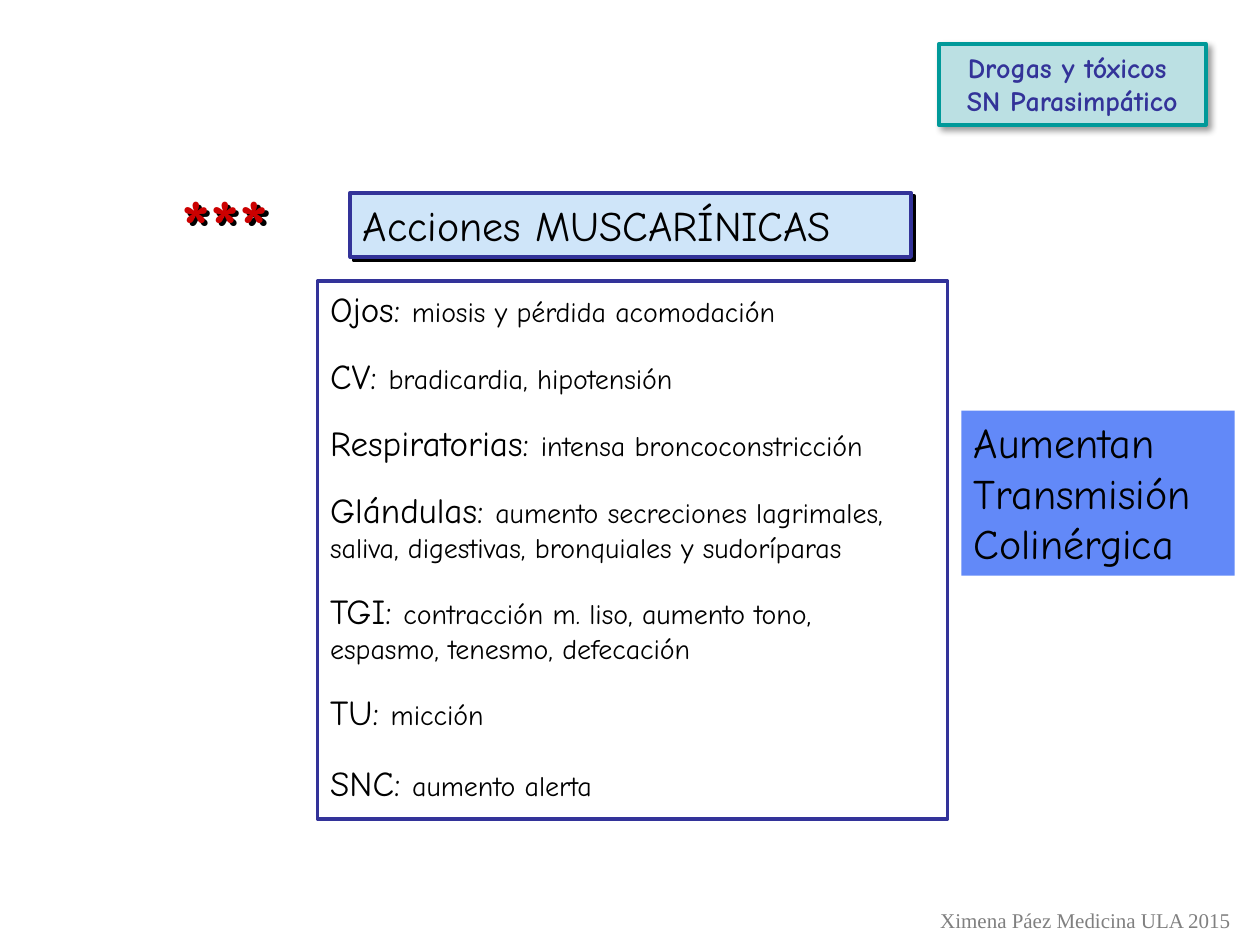
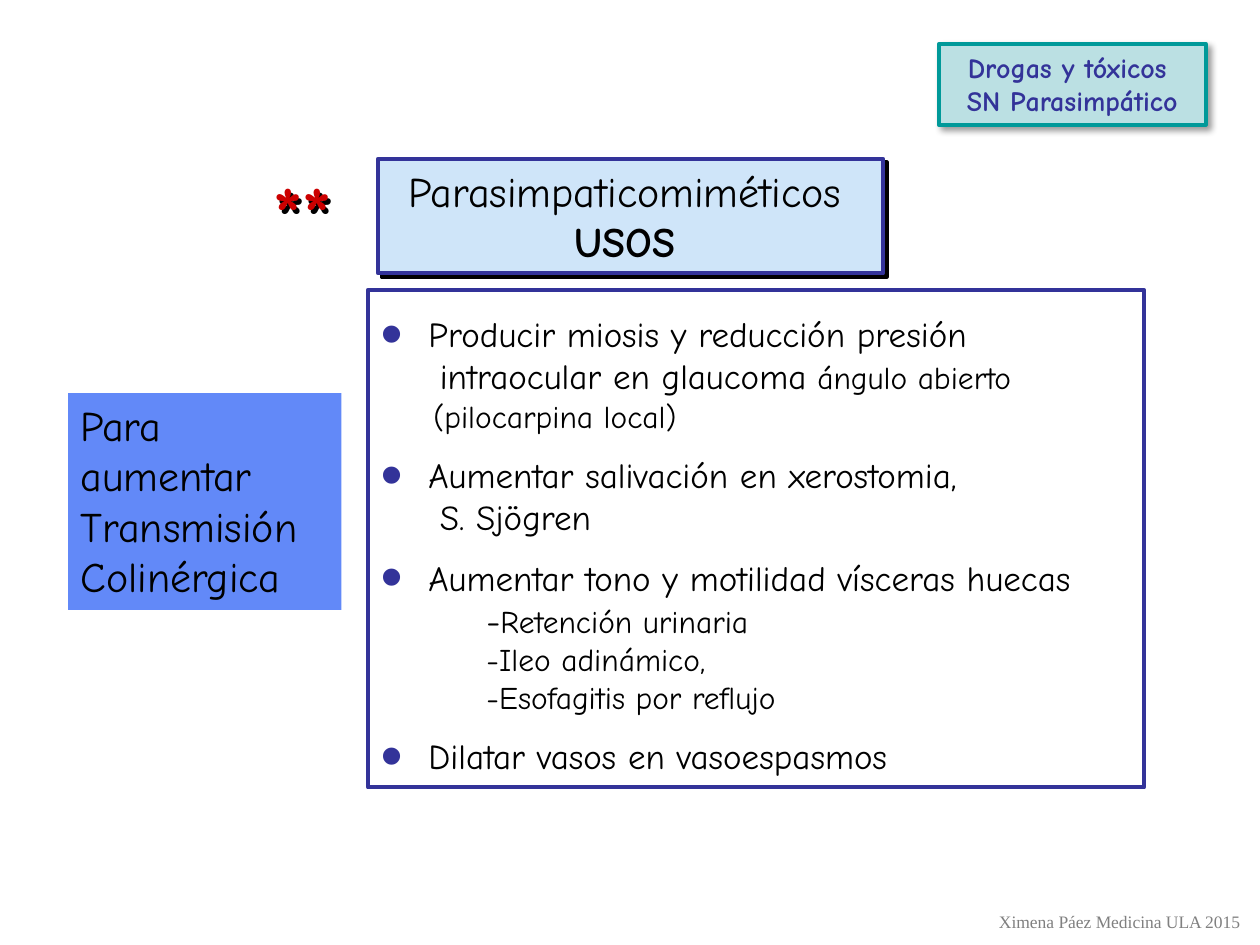
from lxml import etree
from pptx import Presentation
from pptx.dml.color import RGBColor
from pptx.enum.shapes import MSO_SHAPE
from pptx.enum.text import MSO_ANCHOR, MSO_AUTO_SIZE, PP_ALIGN
from pptx.oxml.ns import qn
from pptx.util import Inches, Pt

# Shared style
INDIGO = RGBColor(0x33, 0x33, 0x99)
TEAL = RGBColor(0x00, 0x99, 0x99)
MINT = RGBColor(0xBB, 0xE0, 0xE3)
SKY = RGBColor(0xCF, 0xE5, 0xF9)
BLUE = RGBColor(0x62, 0x89, 0xF8)
RED = RGBColor(0xCC, 0x00, 0x00)
GRAY = RGBColor(0x80, 0x80, 0x80)
BLACK = RGBColor(0x00, 0x00, 0x00)
FONT = "Comic Neue"
FOOTER_FONT = "Times New Roman"
TITLE_AND_BODY = 1


def add_xml(parent, tag, **attributes):
    return etree.SubElement(parent, qn(tag), attributes)


class Deck:
    """Holds the presentation, its style and the current slide."""

    def __init__(self):
        self.prs = Presentation()
        self.prs.slide_width, self.prs.slide_height = Inches(10), Inches(7.5)
        self.slide = None

    def new_slide(self):
        self.slide = self.prs.slides.add_slide(self.prs.slide_layouts[TITLE_AND_BODY])

    def place(self, shape, box):
        shape.left, shape.top, shape.width, shape.height = map(Inches, box)

    def paint(self, shape, fill=None, line=None):
        if fill is None:
            shape.fill.background()
        else:
            shape.fill.solid()
            shape.fill.fore_color.rgb = fill
        if line is None:
            shape.line.fill.background()
        else:
            shape.line.color.rgb = line
            shape.line.width = Pt(2.25)

    def cast_shadow(self, shape, alpha=100, blur=0.0, distance=2.8):
        properties = shape._element.spPr
        for old in properties.findall(qn("a:effectLst")):
            properties.remove(old)
        shadow = add_xml(add_xml(properties, "a:effectLst"), "a:outerShdw",
                         blurRad=str(int(Pt(blur))), dist=str(int(Pt(distance))),
                         dir=str(45 * 60000), algn="tl", rotWithShape="0")
        color = add_xml(shadow, "a:srgbClr", val=str(BLACK))
        add_xml(color, "a:alpha", val=str(alpha * 1000))

    def frame(self, shape, wrap=True):
        text = shape.text_frame
        text.auto_size = MSO_AUTO_SIZE.NONE
        text.word_wrap = wrap
        text.vertical_anchor = MSO_ANCHOR.TOP
        return text

    def paragraph(self, text, first, runs, align=PP_ALIGN.LEFT, before=0,
                  color=BLACK, bold=False, font=FONT):
        """Add one paragraph; runs are (words, size) or (words, size, bold)."""
        line = text.paragraphs[0] if first else text.add_paragraph()
        line.alignment = align
        line.space_before = Pt(before)
        for words, size, *weight in runs:
            run = line.add_run()
            run.text = words
            run.font.name, run.font.size = font, Pt(size)
            run.font.bold = weight[0] if weight else bold
            run.font.color.rgb = color
        return line

    def indent(self, line, left, bullet=False):
        properties = line._p.get_or_add_pPr()
        properties.set("marL", str(Inches(left)))
        properties.set("indent", str(-Inches(left) if bullet else 0))
        if bullet:
            add_xml(add_xml(properties, "a:buClr"), "a:srgbClr", val=str(INDIGO))
            add_xml(properties, "a:buSzPct", val="180000")
            add_xml(properties, "a:buChar", char="•")
        else:
            add_xml(properties, "a:buNone")

    def title(self, box, lines, align):
        heading = self.slide.shapes.title
        self.place(heading, box)
        self.paint(heading, SKY, INDIGO)
        self.cast_shadow(heading)
        text = self.frame(heading)
        for i, runs in enumerate(lines):
            self.paragraph(text, i == 0, runs, align)

    def body(self, box, lines, top_margin=0.05):
        """Fill the framed list; lines are (space before, indent, bullet, runs)."""
        content = self.slide.placeholders[1]
        self.place(content, box)
        self.paint(content, line=INDIGO)
        text = self.frame(content)
        text.margin_top = Inches(top_margin)
        for i, (before, left, bullet, runs) in enumerate(lines):
            line = self.paragraph(text, i == 0, runs, before=before)
            self.indent(line, left, bullet)

    def panel(self, box, lines, size=24, fill=BLUE, line=None,
              align=PP_ALIGN.LEFT, **style):
        panel = self.slide.shapes.add_shape(MSO_SHAPE.RECTANGLE, *map(Inches, box))
        panel.shadow.inherit = False
        self.paint(panel, fill, line)
        text = self.frame(panel)
        for i, words in enumerate(lines):
            self.paragraph(text, i == 0, [(words, size)], align, **style)
        return panel

    def label(self, box, words, size, align=PP_ALIGN.LEFT, **style):
        label = self.slide.shapes.add_textbox(*map(Inches, box))
        self.paragraph(self.frame(label, wrap=False), True, [(words, size)],
                       align, **style)
        return label

    def stars(self, box, count):
        self.cast_shadow(self.label(box, "*" * count, 44, color=RED, bold=True))

    def topic_tag(self):
        tag = self.panel((7.45, 0.35, 2.12, 0.64),
                         ["Drogas y tóxicos ", "SN Parasimpático"], 16, MINT, TEAL,
                         PP_ALIGN.CENTER, color=INDIGO, bold=True)
        self.cast_shadow(tag, alpha=40, blur=4, distance=3)

    def credit(self, box, size):
        self.label(box, "Ximena Páez Medicina ULA 2015", size, PP_ALIGN.CENTER,
                   color=GRAY, font=FOOTER_FONT)


def muscarinic_actions(deck):
    deck.new_slide()
    deck.title((2.78, 1.53, 4.45, 0.51), [[("Acciones MUSCARÍNICAS", 24)]],
               PP_ALIGN.LEFT)

    # Organ, effects (one per line), space before
    actions = [
        ("Ojos: ", ["miosis y pérdida acomodación"], 0),
        ("CV: ", ["bradicardia, hipotensión"], 14.4),
        ("Respiratorias: ", ["intensa broncoconstricción"], 14.4),
        ("Glándulas: ", ["aumento secreciones lagrimales,",
                         "saliva, digestivas, bronquiales y sudoríparas"], 14.4),
        ("TGI: ", ["contracción m. liso, aumento tono,",
                   "espasmo, tenesmo, defecación"], 14.4),
        ("TU: ", ["micción"], 14.4),
        ("SNC: ", ["aumento alerta"], 16.8),
    ]
    lines = []
    for organ, (effect, *more), before in actions:
        lines.append((before, 0, False, [(organ, 20), (effect, 16)]))
        lines += [(0, 0, False, [(rest, 16)]) for rest in more]
    deck.body((2.52, 2.23, 5, 4.27), lines)

    deck.stars((1.34, 1.36, 1.17, 0.83), 3)
    deck.credit((7.35, 7.15, 2.53, 0.3), 12)
    deck.topic_tag()
    deck.panel((7.63, 3.26, 2.17, 1.31), ["Aumentan", "Transmisión", "Colinérgica"])


def parasympathomimetic_uses(deck):
    deck.new_slide()
    deck.title((3, 1.26, 4.01, 0.91),
               [[("Parasimpaticomiméticos", 24), (" ", 20)],
                [("USOS", 24, True), (" ", 20)]], PP_ALIGN.CENTER)

    # Bulleted uses with their indented continuations
    gap, hang, follow, sub = 10.8, 0.38, 0.47, 0.84
    deck.body((2.92, 2.3, 6.16, 3.95), [
        (0, hang, True, [("Producir miosis y reducción presión", 20)]),
        (0, follow, False, [("intraocular en glaucoma", 20), (" ángulo abierto", 18)]),
        (0, 0.42, False, [("(pilocarpina local)", 18)]),
        (gap, hang, True, [("Aumentar salivación en xerostomia,", 20)]),
        (0, follow, False, [("S. Sjögren", 20)]),
        (gap, hang, True, [("Aumentar tono y motilidad vísceras huecas", 20)]),
        (0, sub, False, [("-", 20), ("Retención urinaria", 18)]),
        (0, sub, False, [("-Ileo adinámico,", 18)]),
        (0, sub, False, [("-Esofagitis por reflujo", 18)]),
        (gap, hang, True, [("Dilatar vasos en vasoespasmos", 20)]),
    ], top_margin=0.18)

    deck.stars((2.07, 1.26, 0.85, 0.84), 2)
    deck.credit((7.81, 7.18, 2.15, 0.27), 10)
    deck.topic_tag()
    deck.panel((0.54, 3.12, 2.17, 1.72),
               ["Para", "aumentar", "Transmisión", "Colinérgica"])


def main():
    deck = Deck()
    muscarinic_actions(deck)
    parasympathomimetic_uses(deck)
    deck.prs.save("out.pptx")


if __name__ == "__main__":
    main()
